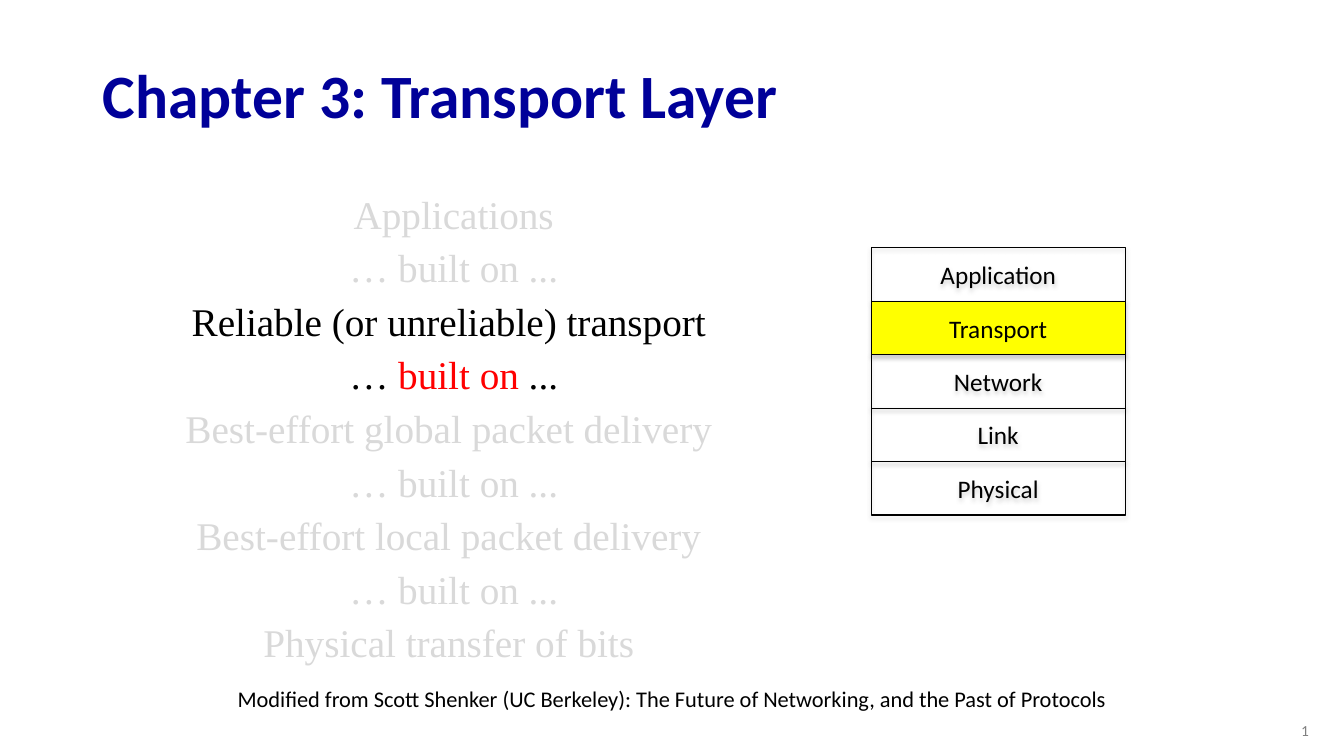
from dataclasses import dataclass

from lxml import etree
from pptx import Presentation
from pptx.dml.color import RGBColor as RGB
from pptx.enum.shapes import MSO_SHAPE as SHAPE
from pptx.enum.text import MSO_ANCHOR as ANCHOR, MSO_AUTO_SIZE as FIT, PP_ALIGN as ALIGN
from pptx.oxml import parse_xml
from pptx.oxml.ns import nsdecls, qn
from pptx.util import Inches, Pt


@dataclass(frozen=True)
class Theme:
    sans: str = "Calibri"
    serif: str = "Times New Roman"
    navy: str = "000099"
    black: str = "000000"
    red: str = "FF0000"
    yellow: str = "FFFF00"
    faded: str = "D9D9D9"
    grey: str = "808080"
    title_size: float = 44
    body_size: float = 28
    layer_size: float = 18
    credit_size: float = 16
    number_size: float = 11


class SlideBuilder:
    def __init__(self, prs, theme):
        self.theme = theme
        self.slide = prs.slides.add_slide(prs.slide_layouts[5])

    def add_run(self, p, text, size, color, font=None, bold=False):
        r = p.add_run()
        r.text = text
        r.font.name = font or self.theme.sans
        r.font.size = Pt(size)
        r.font.bold = bold
        r.font.color.rgb = RGB.from_string(color)

    def title(self, text, box):
        sp = self.slide.shapes.title
        sp.left, sp.top, sp.width, sp.height = map(Inches, box)
        tf = sp.text_frame
        tf.auto_size = FIT.NONE
        tf.vertical_anchor = ANCHOR.MIDDLE
        p = tf.paragraphs[0]
        p.alignment = ALIGN.LEFT
        p.line_spacing = 0.9
        self.add_run(p, text, self.theme.title_size, self.theme.navy, bold=True)

    def textbox(self, box, anchor=ANCHOR.TOP, fit=FIT.NONE):
        tf = self.slide.shapes.add_textbox(*map(Inches, box)).text_frame
        tf.word_wrap = True
        tf.auto_size = fit
        tf.vertical_anchor = anchor
        return tf

    def label(self, text, box, size, color, align, **frame):
        p = self.textbox(box, **frame).paragraphs[0]
        p.alignment = align
        self.add_run(p, text, size, color)

    def statements(self, lines, box):
        tf = self.textbox(box)
        for i, runs in enumerate(lines):
            p = tf.add_paragraph() if i else tf.paragraphs[0]
            p.alignment = ALIGN.CENTER
            p.line_spacing = 0.9
            p.space_before = Pt(8 if i else 0)
            for text, color in runs:
                self.add_run(p, text, self.theme.body_size, color, self.theme.serif)

    def layer(self, name, box, fill=None):
        sp = self.slide.shapes.add_shape(SHAPE.RECTANGLE, *map(Inches, box))
        if fill:
            sp.fill.solid()
            sp.fill.fore_color.rgb = RGB.from_string(fill)
        else:
            sp.fill.background()
        sp.line.color.rgb = RGB.from_string(self.theme.black)
        sp.line.width = Pt(0.75)
        self.soft_shadow(sp)
        tf = sp.text_frame
        tf.vertical_anchor = ANCHOR.MIDDLE
        p = tf.paragraphs[0]
        p.alignment = ALIGN.CENTER
        self.add_run(p, name, self.theme.layer_size, self.theme.black)

    def soft_shadow(self, sp):
        sp.shadow.inherit = False
        effects = sp._element.spPr.find(qn("a:effectLst"))
        shadow = parse_xml(f'<a:outerShdw {nsdecls("a")} rotWithShape="0"/>')
        shadow.set("blurRad", str(Pt(3.1)))
        shadow.set("dist", str(Pt(1.8)))
        shadow.set("dir", str(90 * 60000))
        color = etree.SubElement(shadow, qn("a:srgbClr"), val=self.theme.grey)
        etree.SubElement(color, qn("a:alpha"), val="35000")
        effects.append(shadow)


def main():
    prs = Presentation()
    prs.slide_width, prs.slide_height = Inches(13.33), Inches(7.5)
    theme = Theme()
    s = SlideBuilder(prs, theme)

    built_on = [("… built on ...", theme.faded)]
    s.statements([
        [("Applications", theme.faded)],
        built_on,
        [("Reliable (or unreliable) transport ", theme.black)],
        [("… ", theme.black), ("built on ", theme.red), ("...", theme.black)],
        [("Best-effort global packet delivery ", theme.faded)],
        built_on,
        [("Best-effort local packet delivery ", theme.faded)],
        built_on,
        [("Physical transfer of bits ", theme.faded)],
    ], (0.92, 1.89, 7.16, 4.76))
    s.title("Chapter 3: Transport Layer", (0.92, 0.49, 11.5, 0.98))
    s.label("1", (10.08, 7.05, 3, 0.4), theme.number_size, theme.grey,
            ALIGN.RIGHT, anchor=ANCHOR.MIDDLE)

    layer_height = 0.53
    for i, name in enumerate(["Application", "Transport", "Network", "Link", "Physical"]):
        s.layer(name, (8.64, 2.46 + i * layer_height, 2.52, layer_height),
                theme.yellow if name == "Transport" else None)

    s.label("Modified from Scott Shenker (UC Berkeley): The Future of Networking, "
            "and the Past of Protocols", (2.02, 6.75, 9.29, 0.37), theme.credit_size,
            theme.black, ALIGN.CENTER, fit=FIT.SHAPE_TO_FIT_TEXT)
    prs.save("out.pptx")


if __name__ == "__main__":
    main()
